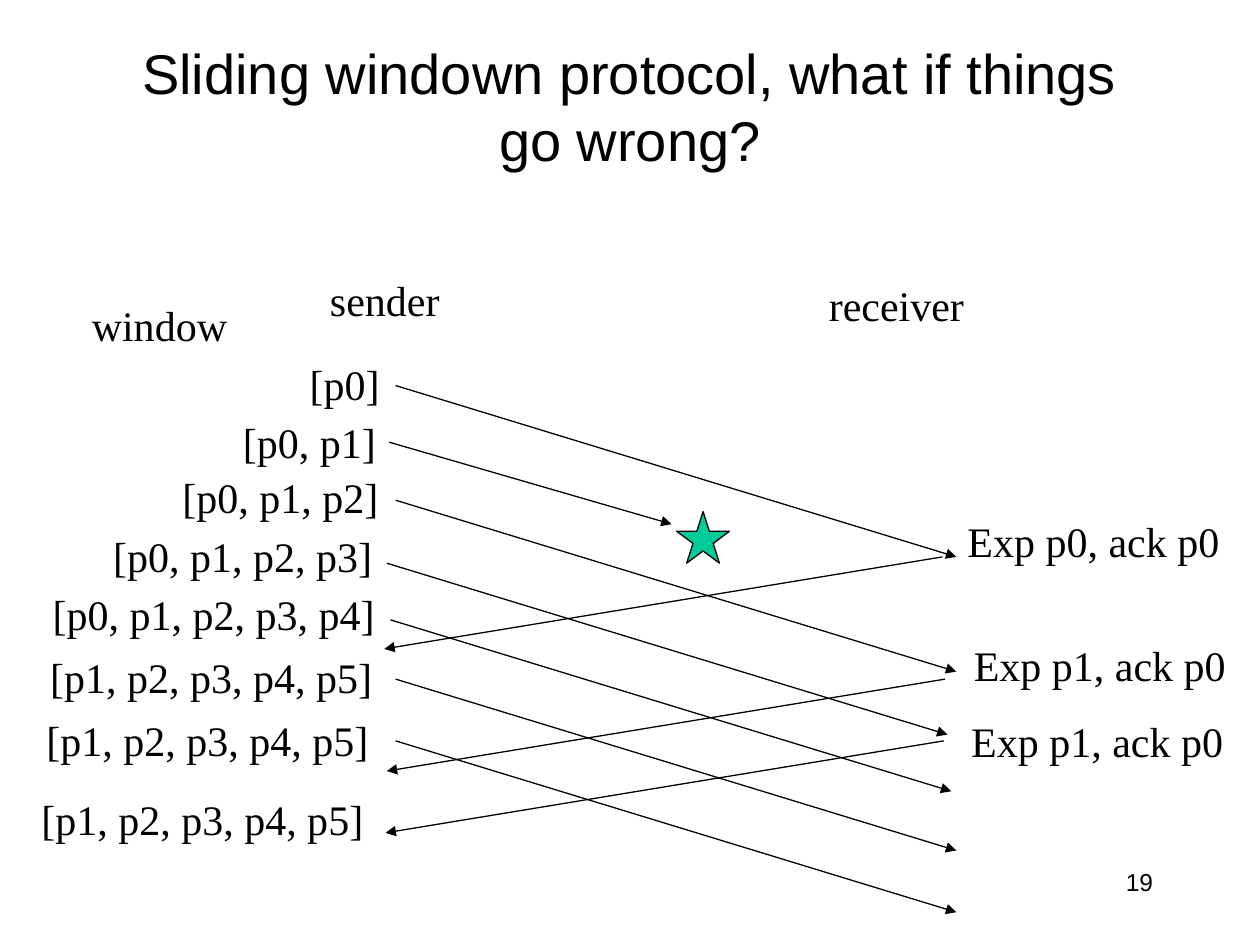
from lxml.etree import SubElement
from pptx import Presentation
from pptx.dml.color import RGBColor
from pptx.enum.shapes import MSO_CONNECTOR, MSO_SHAPE
from pptx.enum.text import MSO_ANCHOR, MSO_AUTO_SIZE, PP_ALIGN
from pptx.oxml.ns import qn
from pptx.util import Inches, Pt

BLACK = RGBColor(0x00, 0x00, 0x00)
GREEN = RGBColor(0x00, 0xCC, 0x99)


def add_label(page, text, left, top, width):
    box = page.shapes.add_textbox(Inches(left), Inches(top), Inches(width), Inches(0.5))
    frame = box.text_frame
    frame.text = text
    frame.word_wrap = False
    frame.auto_size = MSO_AUTO_SIZE.SHAPE_TO_FIT_TEXT
    font = frame.paragraphs[0].runs[0].font
    font.name, font.size, font.color.rgb = "Times New Roman", Pt(24), BLACK


def add_arrow(page, left, top, across, down):
    arrow = page.shapes.add_connector(
        MSO_CONNECTOR.STRAIGHT, Inches(left), Inches(top),
        Inches(left + across), Inches(top + down))
    arrow.line.color.rgb = BLACK
    arrow.line.width = Pt(0.75)
    SubElement(arrow.line._get_or_add_ln(), qn("a:tailEnd"), type="triangle")
    SubElement(arrow._element.spPr, qn("a:effectLst"))


deck = Presentation()
deck.slide_width, deck.slide_height = Inches(10), Inches(7.5)
page = deck.slides.add_slide(deck.slide_layouts[5])

# Title
title = page.shapes.title
title.left, title.top = Inches(0.75), Inches(0.42)
title.width, title.height = Inches(8.5), Inches(0.83)
frame = title.text_frame
frame.text = "Sliding windown protocol, what if things go wrong?"
frame.word_wrap = True
frame.auto_size = MSO_AUTO_SIZE.NONE
frame.vertical_anchor = MSO_ANCHOR.MIDDLE
para = frame.paragraphs[0]
para.alignment = PP_ALIGN.CENTER
font = para.runs[0].font
font.name, font.size, font.color.rgb = "Arial", Pt(32), BLACK

# Slide number
number = page.shapes.add_textbox(Inches(7.17), Inches(6.83), Inches(2.08), Inches(0.5))
number.text_frame.text = "19"
number.text_frame.word_wrap = True
para = number.text_frame.paragraphs[0]
para.alignment = PP_ALIGN.RIGHT
font = para.runs[0].font
font.name, font.size, font.color.rgb = "Arial", Pt(14), BLACK

# Column headings
for text, left, top, width in [
    ("window", 0.63, 2.33, 1.29),
    ("sender", 2.52, 2.13, 1.08),
    ("receiver", 6.48, 2.17, 1.28),
]:
    add_label(page, text, left, top, width)

# Sender windows: first packet, last packet, position and width
for first, last, left, top, width in [
    (0, 0, 2.36, 2.8, 0.76),
    (0, 1, 1.83, 3.26, 1.27),
    (0, 2, 1.35, 3.69, 1.77),
    (0, 3, 0.8, 4.16, 2.28),
    (0, 4, 0.32, 4.62, 2.78),
    (1, 5, 0.3, 5.12, 2.78),
    (1, 5, 0.27, 5.62, 2.78),
    (1, 5, 0.23, 6.25, 2.78),
]:
    packets = ", ".join(f"p{packet}" for packet in range(first, last + 1))
    add_label(page, f"[{packets}]", left, top, width)

# Receiver replies
for expected, left, top in [(0, 7.58, 4.04), (1, 7.63, 5.03), (1, 7.61, 5.63)]:
    add_label(page, f"Exp p{expected}, ack p0", left, top, 2.22)

# Packets that arrive
for left, top in [(3.14, 3.06), (3.14, 3.97), (3.07, 4.47),
                  (3.1, 4.92), (3.14, 5.39), (3.14, 5.88)]:
    add_arrow(page, left, top, 4.45, 1.36)

# Acknowledgements
for left, top in [(7.48, 4.42), (7.5, 5.39), (7.49, 5.88)]:
    add_arrow(page, left, top, -4.43, 0.73)

# Lost packet
add_arrow(page, 3.09, 3.51, 2.24, 0.65)
star = page.shapes.add_shape(
    MSO_SHAPE.STAR_5_POINT, Inches(5.37), Inches(4.06), Inches(0.42), Inches(0.41))
star.shadow.inherit = False
star.fill.solid()
star.fill.fore_color.rgb = GREEN
star.line.color.rgb = BLACK
star.line.width = Pt(0.75)

deck.save("out.pptx")
